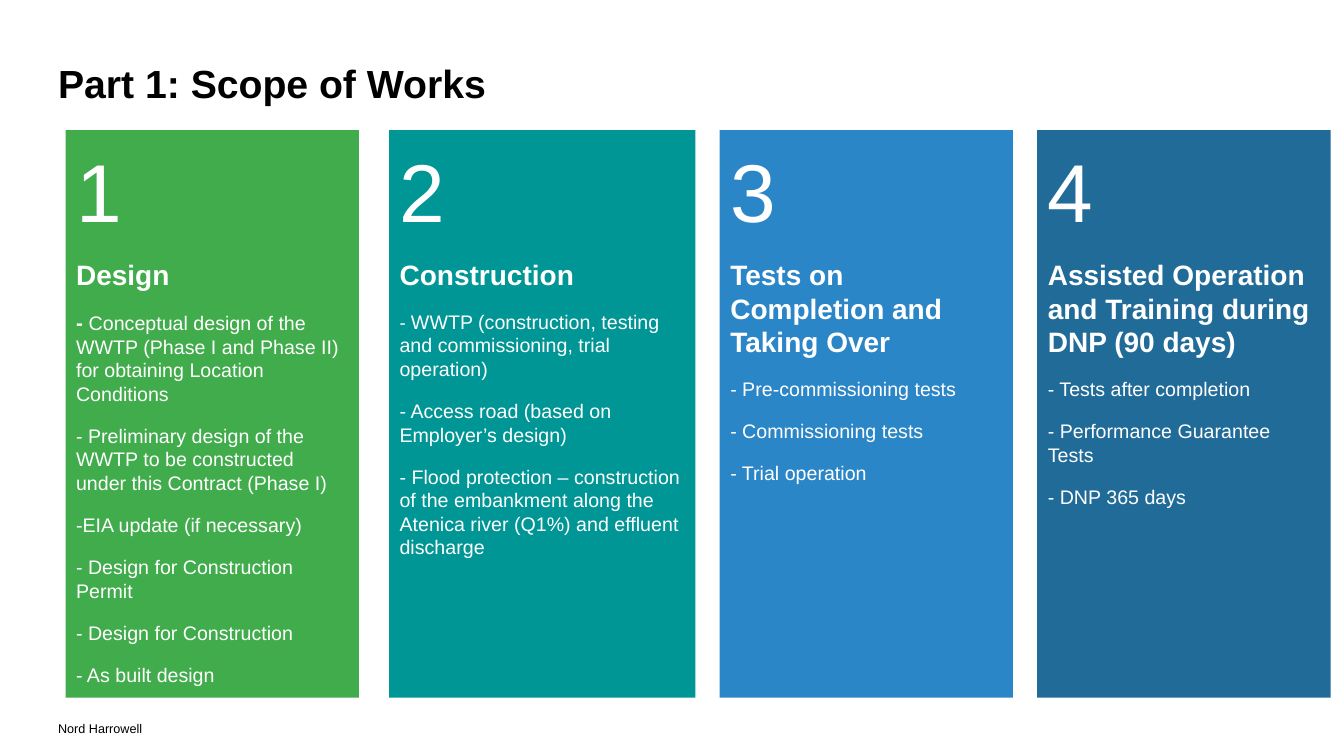
from dataclasses import dataclass

from pptx import Presentation
from pptx import util as u
from pptx.dml.color import RGBColor
from pptx.enum import shapes, text


@dataclass(frozen=True)
class Theme:
    font: str = "Arial"
    ink: str = "000000"
    paper: str = "FFFFFF"
    green: str = "41AC4C"
    teal: str = "009695"
    blue: str = "2B86C7"
    navy: str = "216B99"
    title: float = 28
    number: float = 58.6
    heading: float = 20
    body: float = 14
    footer: float = 9
    paragraph_gap: float = 13.3
    line_spacing: float = 1.0


class ScopeSlide:
    def __init__(self, slide, theme):
        self.slide = slide
        self.theme = theme

    def style(self, run, size, color, bold=False):
        run.font.name = self.theme.font
        run.font.size = u.Pt(size)
        run.font.bold = bold
        run.font.color.rgb = RGBColor.from_string(color)

    def frame(self, shape, inset, anchor):
        frame = shape.text_frame
        frame.word_wrap = True
        frame.vertical_anchor = anchor
        frame.margin_left = frame.margin_right = u.Pt(inset)
        frame.margin_top = frame.margin_bottom = u.Pt(inset)
        return frame

    def label(self, wording, box, size, bold=False):
        shape = self.slide.shapes.add_textbox(*map(u.Pt, box))
        frame = self.frame(shape, 0, text.MSO_ANCHOR.TOP)
        frame.text = wording
        self.style(frame.paragraphs[0].runs[0], size, self.theme.ink, bold)

    def column(self, box, fill, number, heading, items, dash_size, dash_bold):
        theme = self.theme
        panel = self.slide.shapes.add_shape(
            shapes.MSO_SHAPE.RECTANGLE, *map(u.Pt, box))
        panel.shadow.inherit = False
        panel.fill.solid()
        panel.fill.fore_color.rgb = RGBColor.from_string(fill)
        panel.line.fill.background()
        frame = self.frame(panel, 7.55, text.MSO_ANCHOR.TOP)
        frame.text = "\n".join([str(number), heading, "- "] + items[1:])
        sizes = [theme.number, theme.heading, dash_size]
        sizes += [theme.body] * (len(items) - 1)
        bolds = [False, True, dash_bold] + [False] * (len(items) - 1)
        for paragraph, size, bold in zip(frame.paragraphs, sizes, bolds):
            paragraph.alignment = text.PP_ALIGN.LEFT
            paragraph.space_after = u.Pt(theme.paragraph_gap)
            paragraph.line_spacing = theme.line_spacing
            self.style(paragraph.runs[0], size, theme.paper, bold)
        first_item = frame.paragraphs[2].add_run()
        first_item.text = items[0]
        self.style(first_item, theme.body, theme.paper)


def main():
    theme = Theme()
    deck = Presentation()
    deck.slide_width, deck.slide_height = u.Pt(960), u.Pt(540)
    scope = ScopeSlide(deck.slides.add_slide(deck.slide_layouts[6]), theme)

    scope.label("Nord Harrowell", (41.5, 515, 173.5, 11.5), theme.footer)

    stages = [
        (46.8, 209.5, theme.green, "Design", [
            "Conceptual design of the WWTP (Phase I and Phase II) "
            "for obtaining Location Conditions",
            "- Preliminary design of the WWTP to be constructed "
            "under this Contract (Phase I)",
            "-EIA update (if necessary)",
            "- Design for Construction Permit",
            "- Design for Construction",
            "- As built design",
        ], 14.7, True),
        (277.9, 218.9, theme.teal, "Construction", [
            "WWTP (construction, testing and commissioning, trial operation)",
            "- Access road (based on Employer’s design)",
            "- Flood protection – construction of the embankment along "
            "the Atenica river (Q1%) and effluent discharge",
        ], 13.3, False),
        (514.1, 209.5, theme.blue, "Tests on Completion and Taking Over", [
            "Pre-commissioning tests",
            "- Commissioning tests",
            "- Trial operation",
        ], theme.body, False),
        (740.9, 209.5, theme.navy,
         "Assisted Operation and Training during DNP (90 days)", [
             "Tests after completion",
             "- Performance Guarantee Tests",
             "- DNP 365 days",
         ], theme.body, False),
    ]
    for number, stage in enumerate(stages, 1):
        left, width, fill, heading, items, dash_size, dash_bold = stage
        scope.column((left, 92.9, width, 405.4), fill, number, heading,
                     items, dash_size, dash_bold)

    scope.label("Part 1: Scope of Works", (41.5, 42.3, 877, 36),
                theme.title, bold=True)
    deck.save("out.pptx")


if __name__ == "__main__":
    main()
